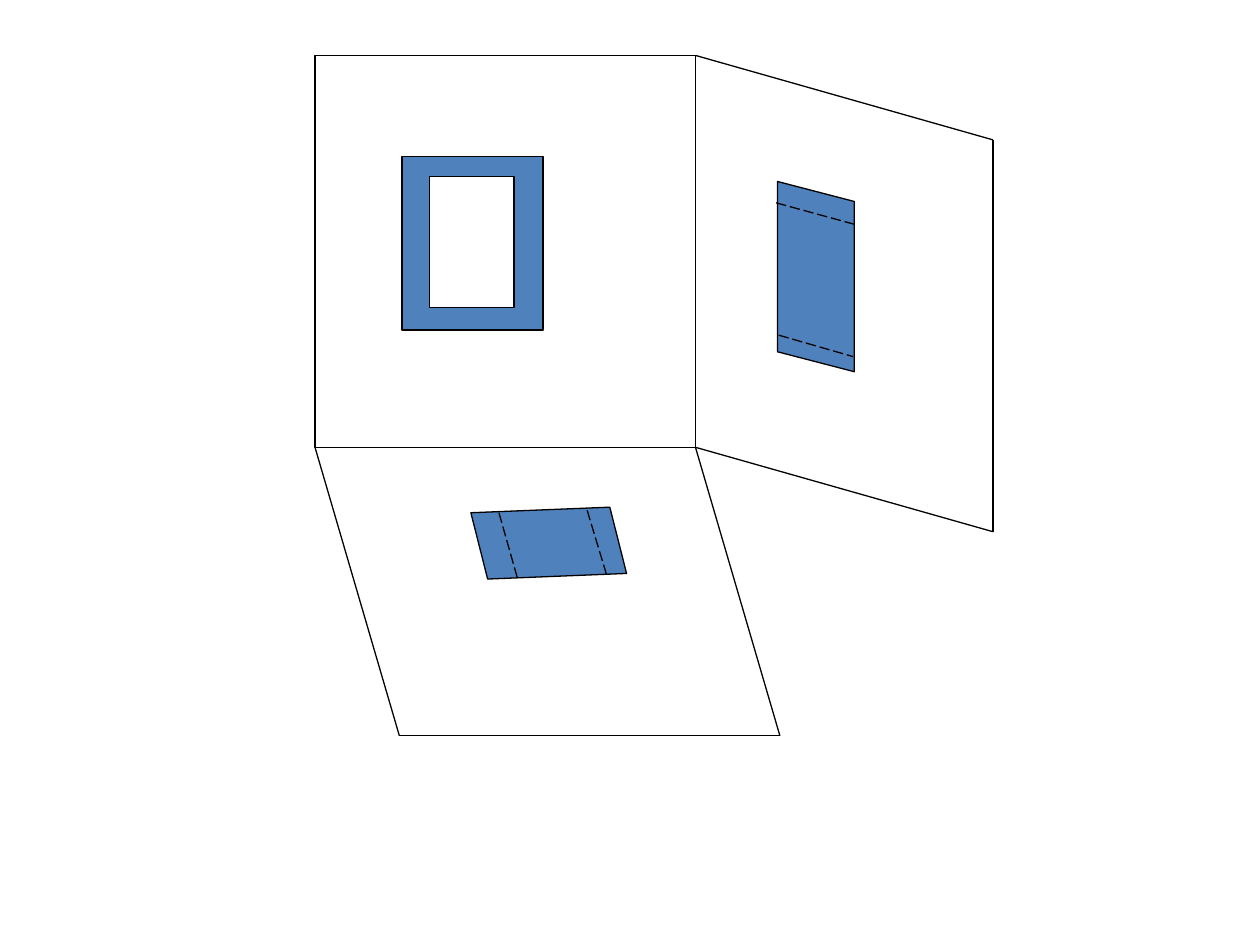
from pptx import Presentation
from pptx.dml.color import RGBColor
from pptx.enum.dml import MSO_LINE
from pptx.enum.shapes import MSO_CONNECTOR, MSO_SHAPE
from pptx.oxml.ns import qn
from pptx.util import Inches, Pt

RECT = MSO_SHAPE.RECTANGLE
PARALLELOGRAM = MSO_SHAPE.PARALLELOGRAM
STRAIGHT = MSO_CONNECTOR.STRAIGHT
LONG_DASH = MSO_LINE.LONG_DASH

COLORS = {"ink": "000000", "block": "4F81BD", "opening": "FFFFFF"}
LINE_WIDTH = Pt(0.75)

# The three view planes, in inches
LEFT, TOP, RIGHT, BOTTOM = 2.5, 0.44, 5.52, 3.55
SIDE_DX, SIDE_DY = 2.36, 0.67      # slant of the side plane
FLOOR_DX, FLOOR_DY = 0.67, 2.29    # slant of the floor plane


def color(name):
    return RGBColor.from_string(COLORS[name])


def style_line(line):
    line.color.rgb = color("ink")
    line.width = LINE_WIDTH


def add_block(shapes, kind, box, fill=None, rotation=0, slant=None):
    """Add an outlined shape; without a fill name it stays hollow."""
    sp = shapes.add_shape(kind, *(Inches(v) for v in box))
    sp.shadow.inherit = False
    sp.rotation = rotation
    if slant is not None:
        sp.adjustments[0] = slant
    if fill:
        sp.fill.solid()
        sp.fill.fore_color.rgb = color(fill)
    else:
        sp.fill.background()
    style_line(sp.line)
    return sp


def add_line(shapes, start, end, dash=None):
    cxn = shapes.add_connector(STRAIGHT, *(Inches(v) for v in (*start, *end)))
    style_line(cxn.line)
    if dash:
        cxn.line.dash_style = dash
    sppr = cxn._element.spPr
    sppr.append(sppr.makeelement(qn("a:effectLst"), {}))
    return cxn


def add_planes(shapes):
    """Draw the front plane and the side and floor planes that fold from it."""
    add_block(shapes, RECT, (LEFT, TOP, RIGHT - LEFT, BOTTOM - TOP))
    corner = (RIGHT, BOTTOM)
    side_top = (RIGHT + SIDE_DX, TOP + SIDE_DY)
    side_bottom = (RIGHT + SIDE_DX, BOTTOM + SIDE_DY)
    floor_left = (LEFT + FLOOR_DX, BOTTOM + FLOOR_DY)
    floor_right = (RIGHT + FLOOR_DX, BOTTOM + FLOOR_DY)
    edges = [
        ((RIGHT, TOP), corner),
        ((LEFT, BOTTOM), corner),
        ((RIGHT, TOP), side_top),
        (side_top, side_bottom),
        (corner, side_bottom),
        ((LEFT, BOTTOM), floor_left),
        (floor_left, floor_right),
        (corner, floor_right),
    ]
    for start, end in edges:
        add_line(shapes, start, end)


def add_front_view(shapes):
    frame = shapes.add_group_shape().shapes
    add_block(frame, RECT, (3.19, 1.24, 1.12, 1.38), "block")
    add_block(frame, RECT, (3.41, 1.4, 0.67, 1.04), "opening")


def add_hidden_view(shapes, box, rotation, slant, hidden_edges):
    """Add a slanted solid view with dashed lines for its hidden edges."""
    add_block(shapes, PARALLELOGRAM, box, "block", rotation, slant)
    for start, end in hidden_edges:
        add_line(shapes, start, end, LONG_DASH)


def main():
    prs = Presentation()
    prs.slide_width, prs.slide_height = Inches(10), Inches(7.5)
    s = prs.slides.add_slide(prs.slide_layouts[6])

    add_planes(s.shapes)
    add_front_view(s.shapes)
    add_hidden_view(s.shapes, (5.72, 1.89, 1.51, 0.61), 270, 0.26,
                    [((6.16, 1.61), (6.78, 1.78)),
                     ((6.18, 2.66), (6.77, 2.83))])
    add_hidden_view(s.shapes, (3.97, 3.77, 0.77, 1.08), 255.8, 0.295,
                    [((3.96, 4.07), (4.11, 4.6)),
                     ((4.66, 4.05), (4.82, 4.58))])
    prs.save("out.pptx")


if __name__ == "__main__":
    main()
